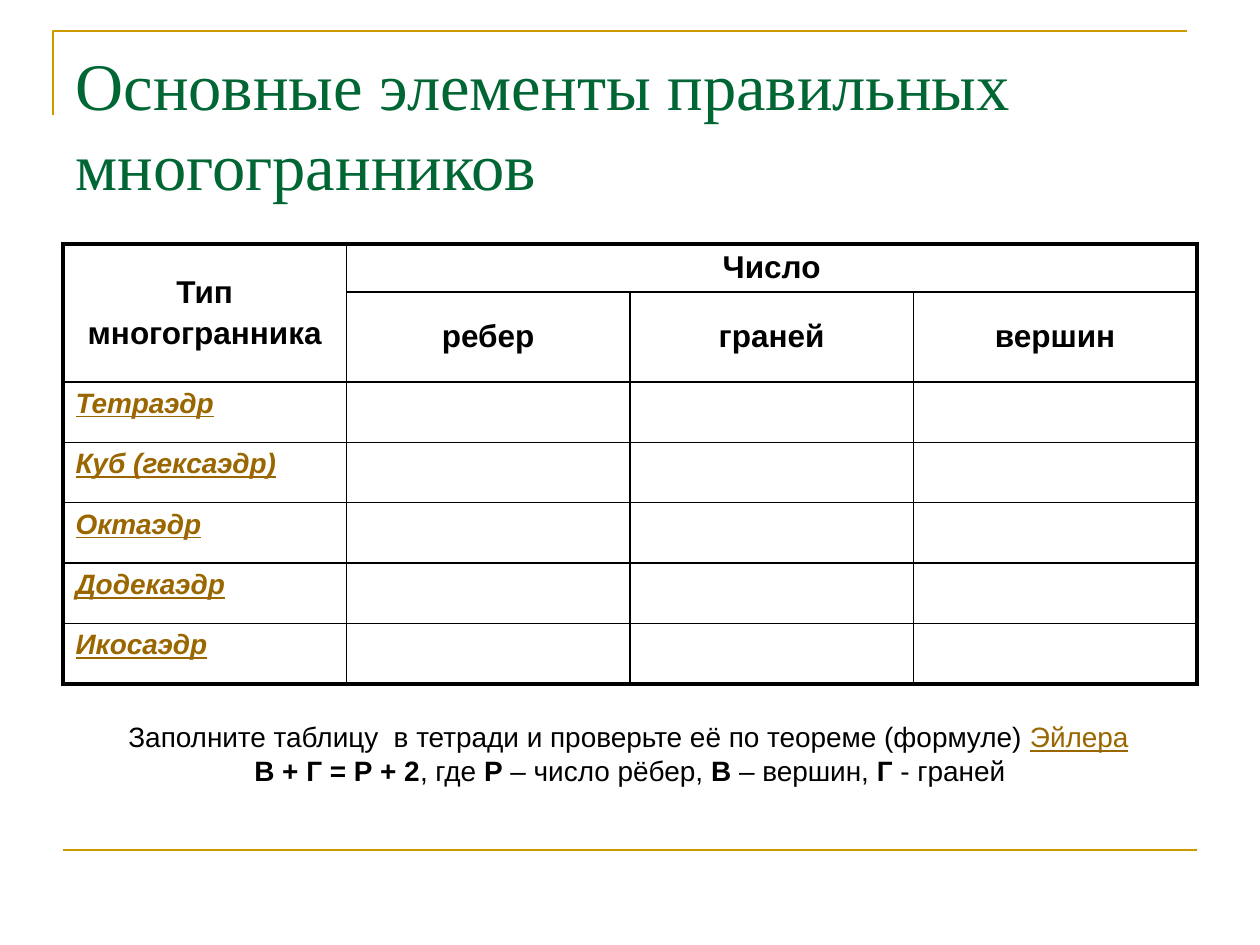
import pptx
import pptx.dml.color
import pptx.enum.shapes
import pptx.enum.text
import pptx.oxml
import pptx.oxml.ns
import pptx.util

PX = 914400 // 126
GOLD, GREEN, BROWN, BLACK = "CC9900", "006633", "996600", "000000"
ALIGN = pptx.enum.text.PP_ALIGN
ANCHOR = pptx.enum.text.MSO_ANCHOR
SOLIDS = ["Тетраэдр", "Куб (гексаэдр)", "Октаэдр", "Додекаэдр", "Икосаэдр"]


def px(length):
    return pptx.util.Emu(round(length * PX))


def rgb(value):
    return pptx.dml.color.RGBColor.from_string(value)


def write(para, text, size=16, font="Arial", color=BLACK, bold=False,
          italic=False, underline=False):
    span = para.add_run()
    span.text = text
    style = span.font
    style.size, style.name = pptx.util.Pt(size), font
    style.bold, style.italic, style.underline = bold, italic, underline
    style.color.rgb = rgb(color)


def style_line(shape):
    shape.line.color.rgb = rgb(GOLD)
    shape.line.width = pptx.util.Pt(1.5)


def add_frame(page, left, top, width, height, corner_height):
    """Draw the corner at the top left and the rule at the bottom."""
    builder = page.shapes.build_freeform(left, top + corner_height, scale=PX)
    builder.add_line_segments([(left, top), (left + width, top)], close=False)
    corner = builder.convert_to_shape()
    corner.shadow.inherit = False
    corner.fill.background()
    style_line(corner)

    start, bottom = left + 10, top + height
    rule = page.shapes.add_connector(
        pptx.enum.shapes.MSO_CONNECTOR.STRAIGHT,
        px(start), px(bottom), px(start + width), px(bottom))
    style_line(rule)
    rule._element.spPr.append(pptx.oxml.parse_xml(
        f'<a:effectLst {pptx.oxml.ns.nsdecls("a")}/>'))


def add_title(page, left, top, width, height):
    title = page.shapes.title
    title.left, title.top = px(left), px(top)
    title.width, title.height = px(width), px(height)
    box = title.text_frame
    box.auto_size = pptx.enum.text.MSO_AUTO_SIZE.NONE
    box.vertical_anchor = ANCHOR.TOP
    para = box.paragraphs[0]
    para.alignment = ALIGN.LEFT
    write(para, "Основные элементы правильных многогранников",
          size=38, font="Times New Roman", color=GREEN)


def set_borders(cell, outer):
    """Draw the four borders, thicker on the sides named in outer."""
    properties = cell._tc.get_or_add_tcPr()
    for side in "LRTB":
        width = pptx.util.Pt(2.25 if side in outer else 1)
        properties.append(pptx.oxml.parse_xml(
            f'<a:ln{side} {pptx.oxml.ns.nsdecls("a")} w="{width}">'
            f'<a:solidFill><a:srgbClr val="{BLACK}"/></a:solidFill></a:ln{side}>'))


def fill_cell(cell, lines, align=ALIGN.CENTER, anchor=ANCHOR.MIDDLE,
              size=18, **style):
    cell.vertical_anchor = anchor
    for index, line in enumerate(lines):
        box = cell.text_frame
        para = box.add_paragraph() if index else box.paragraphs[0]
        para.alignment = align
        para.space_before = pptx.util.Pt(size * 0.2)
        write(para, line, size=size, bold=True, **style)


def add_solids_table(page, left, top, width, height):
    header_heights = [48, 90]
    body_height = (height - sum(header_heights)) / len(SOLIDS)
    heights = header_heights + [body_height] * len(SOLIDS)
    row_count, column_count = len(heights), 4
    table = page.shapes.add_table(row_count, column_count, px(left), px(top),
                                  px(width), px(height)).table
    table.first_row = table.horz_banding = False
    for column in table.columns:
        column.width = px(width / column_count)
    for row, row_height in zip(table.rows, heights):
        row.height = px(row_height)

    table.cell(0, 0).merge(table.cell(1, 0))
    table.cell(0, 1).merge(table.cell(0, column_count - 1))
    for row in range(row_count):
        for column in range(column_count):
            cell = table.cell(row, column)
            edges = {"L": column == 0, "T": row == 0,
                     "R": column + cell.span_width == column_count,
                     "B": row + cell.span_height == row_count}
            set_borders(cell, [side for side, outer in edges.items() if outer])
            cell.fill.background()

    fill_cell(table.cell(0, 0), ["Тип", "многогранника"])
    fill_cell(table.cell(0, 1), ["Число"])
    for column, name in enumerate(["ребер", "граней", "вершин"], 1):
        fill_cell(table.cell(1, column), [name])
    for row, name in enumerate(SOLIDS, len(header_heights)):
        fill_cell(table.cell(row, 0), [name], align=ALIGN.LEFT,
                  anchor=ANCHOR.TOP, size=16, color=BROWN,
                  italic=True, underline=True)


def add_task(page, left, top, width, height):
    box = page.shapes.add_textbox(px(left), px(top), px(width), px(height)).text_frame
    box.word_wrap = True
    box.vertical_anchor = ANCHOR.BOTTOM
    task = box.paragraphs[0]
    write(task, "Заполните таблицу  в тетради и проверьте её по теореме (формуле) ")
    write(task, "Эйлера", color=BROWN, underline=True)

    formula = box.add_paragraph()
    indent = formula._p.get_or_add_pPr()
    indent.set("marL", str(px(126)))
    indent.set("indent", "0")
    parts = ["В + Г = Р + 2", ", где ", "Р", " – число рёбер,", " В",
             " – вершин, ", "Г", " - граней"]
    for index, part in enumerate(parts):
        write(formula, part, bold=index % 2 == 0)


def main():
    deck = pptx.Presentation()
    deck.slide_width, deck.slide_height = px(1260), px(945)
    page = deck.slides.add_slide(deck.slide_layouts[5])
    add_frame(page, 53, 31, 1134, 819, corner_height=84)
    add_title(page, 63, 38, 1134, 157)
    add_solids_table(page, 63, 244, 1134, 440)
    add_task(page, 116, 680, 1144, 113)
    deck.save("out.pptx")


if __name__ == "__main__":
    main()
